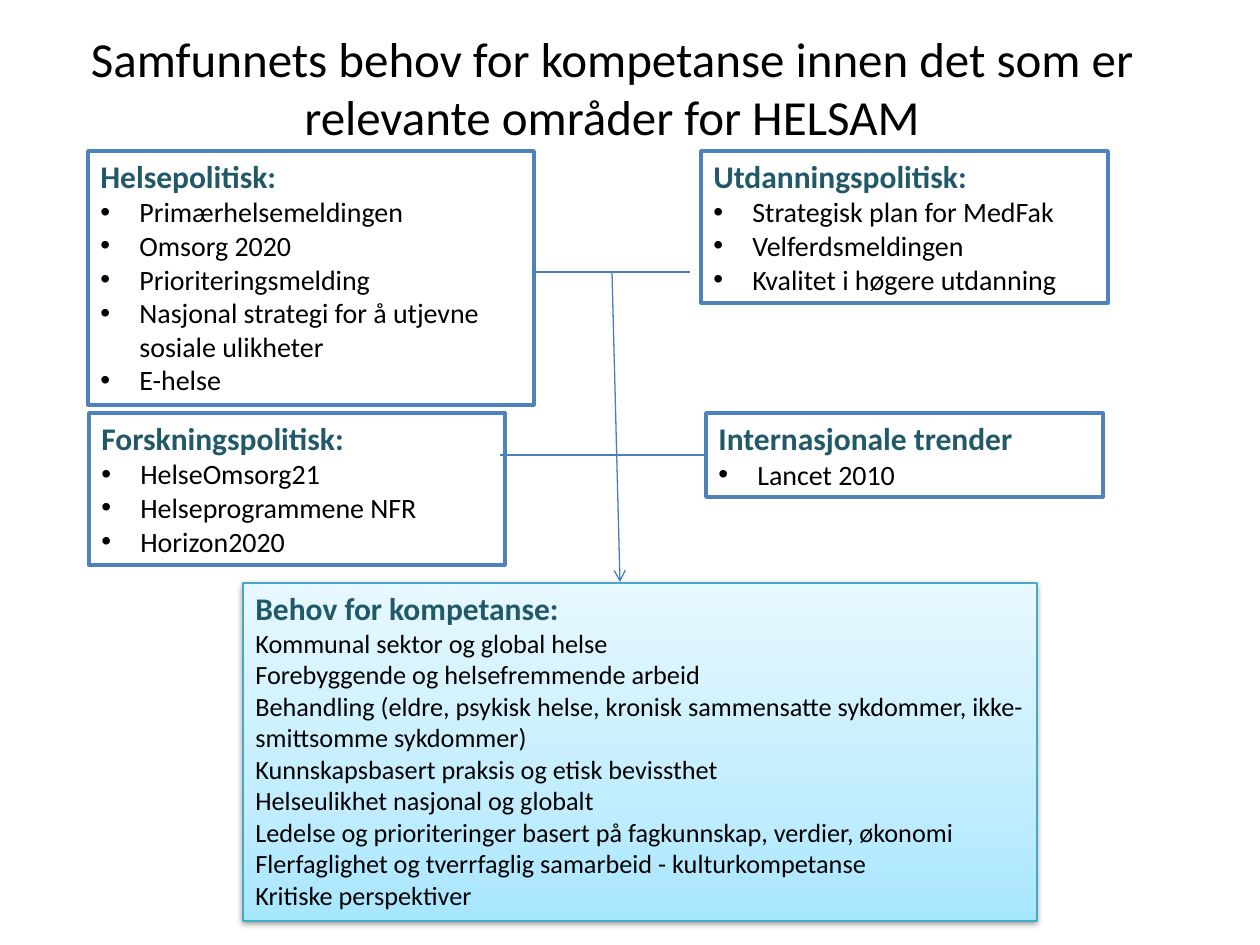
from copy import deepcopy

from lxml.etree import SubElement
from pptx import Presentation
from pptx.dml.color import RGBColor as Rgb
from pptx.enum.shapes import MSO_CONNECTOR as Connector, MSO_SHAPE as Shape
from pptx.enum.text import MSO_ANCHOR as Anchor, PP_ALIGN as Align
from pptx.oxml.ns import qn
from pptx.util import Pt

EMU_PER_PX = 914400 / 126
FONT = "Calibri"
COLORS = {
    "text": "000000",
    "heading": "215968",
    "box": "FFFFFF",
    "box_line": "4F81BD",
    "connector": "4B7EBC",
    "needs_line": "46AAC5",
    "shadow": "000000",
}
NEEDS_GRADIENT = [(0, "A7E6FF"), (0.35, "C1EDFF"), (1, "E7F8FF")]
TITLE = "Samfunnets behov for kompetanse innen det som er relevante områder for HELSAM"
POLICY_BOXES = [
    ((88, 151, 446, 254), "Helsepolitisk:", [
        "Primærhelsemeldingen",
        "Omsorg 2020",
        "Prioriteringsmelding",
        "Nasjonal strategi for å utjevne sosiale ulikheter",
        "E-helse",
    ]),
    ((701, 151, 407, 152), "Utdanningspolitisk:", [
        "Strategisk plan for MedFak",
        "Velferdsmeldingen",
        "Kvalitet i høgere utdanning",
    ]),
    ((89, 413, 416, 152), "Forskningspolitisk:", [
        "HelseOmsorg21",
        "Helseprogrammene NFR",
        "Horizon2020",
    ]),
    ((706, 413, 397, 84), "Internasjonale trender", ["Lancet 2010"]),
]
NEEDS_BOX = ((243, 583, 794, 338), "Behov for kompetanse:", [
    "Kommunal sektor og global helse",
    "Forebyggende og helsefremmende arbeid",
    "Behandling (eldre, psykisk helse, kronisk sammensatte sykdommer, ikke-smittsomme sykdommer)",
    "Kunnskapsbasert praksis og etisk bevissthet",
    "Helseulikhet nasjonal og globalt",
    "Ledelse og prioriteringer basert på fagkunnskap, verdier, økonomi",
    "Flerfaglighet og tverrfaglig samarbeid - kulturkompetanse",
    "Kritiske perspektiver",
])


def px(length):
    return round(length * EMU_PER_PX)


def color(name):
    return Rgb.from_string(COLORS[name])


def add_run(paragraph, text, size, color_name, bold=False):
    run = paragraph.add_run()
    run.text = text
    run.font.name = FONT
    run.font.size = Pt(size)
    run.font.bold = bold
    run.font.color.rgb = color(color_name)


def add_bullet(paragraph):
    properties = paragraph._p.get_or_add_pPr()
    properties.set("marL", str(px(39)))
    properties.set("indent", str(px(-39)))
    SubElement(properties, qn("a:buFont"), typeface="Arial")
    SubElement(properties, qn("a:buChar"), char="•")


def set_title(slide):
    title = slide.shapes.title
    title.left, title.top, title.width, title.height = map(px, (45, 8, 1134, 158))
    frame = title.text_frame
    frame.word_wrap = True
    frame.vertical_anchor = Anchor.MIDDLE
    paragraph = frame.paragraphs[0]
    paragraph.alignment = Align.CENTER
    add_run(paragraph, TITLE, 28, "text")


def add_box(slide, bounds, heading, items, size, line_color, line_width, bulleted):
    shape = slide.shapes.add_shape(Shape.RECTANGLE, *map(px, bounds))
    shape.shadow.inherit = False
    shape.fill.solid()
    shape.fill.fore_color.rgb = color("box")
    shape.line.color.rgb = color(line_color)
    shape.line.width = Pt(line_width)
    frame = shape.text_frame
    frame.word_wrap = True
    frame.vertical_anchor = Anchor.TOP
    paragraph = frame.paragraphs[0]
    paragraph.alignment = Align.LEFT
    add_run(paragraph, heading, 18, "heading", bold=True)
    for item in items:
        paragraph = frame.add_paragraph()
        paragraph.alignment = Align.LEFT
        if bulleted:
            add_bullet(paragraph)
        add_run(paragraph, item, size, "text")
    return shape


def fill_gradient(shape, stops, angle):
    """Fill with any number of (position, hex) stops; angle is counter-clockwise."""
    shape.fill.gradient()
    shape.fill.gradient_angle = angle
    stop_list = shape._element.spPr.find(qn("a:gradFill")).find(qn("a:gsLst"))
    while len(stop_list) < len(stops):
        stop_list.append(deepcopy(stop_list[-1]))
    for stop, (position, hex_color) in zip(shape.fill.gradient_stops, stops):
        stop.position = position
        stop.color.rgb = Rgb.from_string(hex_color)


def add_shadow(shape):
    effects = shape._element.spPr.find(qn("a:effectLst"))
    shadow = SubElement(effects, qn("a:outerShdw"), blurRad=str(Pt(3.1)),
                        dist=str(Pt(1.6)), dir="5400000", rotWithShape="0")
    shade = SubElement(shadow, qn("a:srgbClr"), val=COLORS["shadow"])
    SubElement(shade, qn("a:alpha"), val="38000")


def add_line(slide, start, end, arrow=False):
    line = slide.shapes.add_connector(Connector.STRAIGHT, *map(px, start + end))
    line.line.color.rgb = color("connector")
    line.line.width = Pt(0.75)
    if arrow:
        SubElement(line.line._get_or_add_ln(), qn("a:tailEnd"), type="arrow")
    SubElement(line._element.spPr, qn("a:effectLst"))
    return line


def main():
    presentation = Presentation()
    presentation.slide_width = px(1260)
    presentation.slide_height = px(945)
    slide = presentation.slides.add_slide(presentation.slide_layouts[5])
    set_title(slide)
    boxes = [add_box(slide, *content, 16, "box_line", 2, bulleted=True)
             for content in POLICY_BOXES]

    add_line(slide, (612, 272), (620, 582), arrow=True)
    add_line(slide, (534, 272), (690, 272))
    trends_line = add_line(slide, (500, 455), (706, 455))
    trends_line.end_connect(boxes[3], 1)

    needs = add_box(slide, *NEEDS_BOX, 15, "needs_line", 0.75, bulleted=False)
    fill_gradient(needs, NEEDS_GRADIENT, 90)
    add_shadow(needs)
    presentation.save("out.pptx")


if __name__ == "__main__":
    main()
